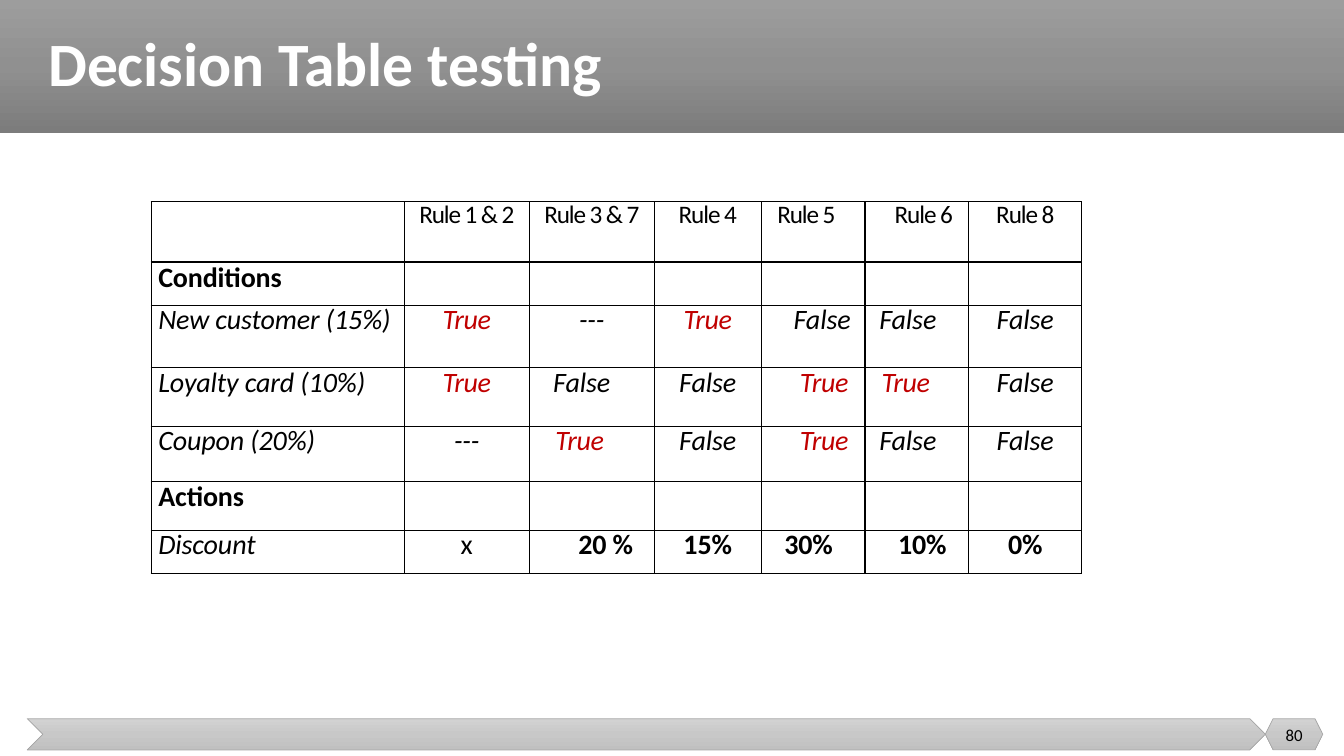
from copy import deepcopy
from dataclasses import dataclass

from lxml import etree
from pptx import Presentation
from pptx.dml.color import RGBColor
from pptx.enum.shapes import MSO_SHAPE
from pptx.enum.text import MSO_ANCHOR, PP_ALIGN
from pptx.oxml.ns import qn
from pptx.util import Inches, Pt

LEFT, CENTER, RIGHT = PP_ALIGN.LEFT, PP_ALIGN.CENTER, PP_ALIGN.RIGHT
MIDDLE = MSO_ANCHOR.MIDDLE
RECTANGLE, CHEVRON, HEXAGON = MSO_SHAPE.RECTANGLE, MSO_SHAPE.CHEVRON, MSO_SHAPE.HEXAGON


@dataclass(frozen=True)
class Theme:
    font: str = "Calibri"
    white: str = "FFFFFF"
    ink: str = "000000"
    true_red: str = "C00000"
    footer_line: str = "A5A5A5"
    banner: tuple = ("9D9D9D", "909090", "7C7C7C")
    footer: tuple = ("D2D2D2", "C8C8C8", "C0C0C0")
    title_size: int = 44
    rule_size: int = 18
    body_size: int = 20
    page_size: int = 12


THEME = Theme()
SLIDE_WIDTH, SLIDE_HEIGHT = 13.33, 7.5
BANNER_HEIGHT = 1.32
FOOTER_TOP, FOOTER_HEIGHT = 7.13, 0.31
PAGE_LEFT, PAGE_WIDTH = 12.55, 0.57
COLUMN_WIDTHS = (2.51, 1.24, 1.24, 1.06, 1.03, 1.03, 1.12)
ROW_HEIGHTS = (0.6, 0.43, 0.62, 0.58, 0.55, 0.48, 0.43)
RULE_ROW, DISCOUNT_ROW = 0, 6
SECTION_ROWS = (1, 5)
DECISIONS = (
    ("", "Rule 1 & 2", "Rule 3 & 7", "Rule 4", "Rule 5", "Rule 6", "Rule 8"),
    ("Conditions",),
    ("New customer (15%)", "True", "---", "True", "False", "False", "False"),
    ("Loyalty card (10%)", "True", "False", "False", "True", "True", "False"),
    ("Coupon (20%)", "---", "True", "False", "True", "False", "False"),
    ("Actions",),
    ("Discount", "x", "20 %", "15%", "30%", "10%", "0%"),
)
PLACEMENTS = {
    (0, 4): (LEFT, 0.16, 0),
    (0, 5): (RIGHT, 0, 0.16),
    (2, 4): (CENTER, 0.18, 0),
    (2, 5): (CENTER, 0, 0.18),
    (3, 2): (CENTER, 0, 0.2),
    (3, 4): (CENTER, 0.22, 0),
    (3, 5): (CENTER, 0, 0.22),
    (4, 2): (CENTER, 0, 0.24),
    (4, 4): (CENTER, 0.22, 0),
    (4, 5): (CENTER, 0, 0.18),
    (6, 2): (RIGHT, 0, 0.21),
    (6, 4): (LEFT, 0.23, 0),
    (6, 5): (RIGHT, 0, 0.22),
}


def style_runs(paragraph, size, color, bold=False, italic=False, spacing=0):
    for run in paragraph.runs:
        run.font.name = THEME.font
        run.font.size = Pt(size)
        run.font.bold = bold
        run.font.italic = italic
        run.font.color.rgb = RGBColor.from_string(color)
        if spacing:
            run.font._element.set("spc", str(round(spacing * 100)))


def add_band(slide, preset, box, colors, line=None):
    band = slide.shapes.add_shape(preset, *map(Inches, box))
    band.shadow.inherit = False
    band.fill.gradient()
    stop_list = band._element.spPr.find(qn("a:gradFill")).find(qn("a:gsLst"))
    stop_list.append(deepcopy(stop_list[-1]))
    band.fill.gradient_angle = 270
    for index, (stop, color) in enumerate(zip(band.fill.gradient_stops, colors)):
        stop.color.rgb = RGBColor.from_string(color)
        stop.position = index / (len(colors) - 1)
    if line:
        band.line.color.rgb = RGBColor.from_string(line)
        band.line.width = Pt(0.5)
    else:
        band.line.fill.background()


def add_label(slide, text, box, size, color, align=LEFT, bold=False):
    frame = slide.shapes.add_textbox(*map(Inches, box)).text_frame
    frame.word_wrap = True
    frame.vertical_anchor = MIDDLE
    frame.text = text
    paragraph = frame.paragraphs[0]
    paragraph.alignment = align
    paragraph.line_spacing = 0.9
    style_runs(paragraph, size, color, bold)


def outline_cell(cell):
    properties = cell._tc.get_or_add_tcPr()
    for side in ("a:lnL", "a:lnR", "a:lnT", "a:lnB"):
        edge = etree.SubElement(properties, qn(side), w=str(Pt(1)))
        fill = etree.SubElement(edge, qn("a:solidFill"))
        etree.SubElement(fill, qn("a:srgbClr"), val=THEME.ink)
    cell.fill.background()


def write_cell(cell, text, row, column):
    cell.margin_left = cell.margin_right = cell.margin_top = cell.margin_bottom = 0
    cell.text = text
    paragraph = cell.text_frame.paragraphs[0]
    default = (CENTER, 0, 0) if column else (LEFT, 0.07, 0)
    align, left, right = PLACEMENTS.get((row, column), default)
    paragraph.alignment = align
    indents = paragraph._p.get_or_add_pPr()
    for name, inset in (("marL", left), ("marR", right), ("indent", 0)):
        indents.set(name, str(Inches(inset)))

    section = row in SECTION_ROWS
    rule = row == RULE_ROW
    result = row == DISCOUNT_ROW and column > 0
    paragraph.line_spacing = Pt(20.4 if rule else 23.4 if section else 22.8)
    style_runs(
        paragraph,
        THEME.rule_size if rule else THEME.body_size,
        THEME.true_red if text == "True" else THEME.ink,
        bold=section or (result and text != "x"),
        italic=not (rule or section or result),
        spacing=-0.8 if rule else -0.3 if text == "True" else -0.1,
    )


def add_decision_table(slide, left, top):
    size = Inches(sum(COLUMN_WIDTHS)), Inches(sum(ROW_HEIGHTS))
    table = slide.shapes.add_table(
        len(ROW_HEIGHTS), len(COLUMN_WIDTHS), Inches(left), Inches(top), *size
    ).table
    table.first_row = table.horz_banding = False
    for column, width in zip(table.columns, COLUMN_WIDTHS):
        column.width = Inches(width)
    for row, height in zip(table.rows, ROW_HEIGHTS):
        row.height = Inches(height)
    for cell in table.iter_cells():
        outline_cell(cell)
    for row, entries in enumerate(DECISIONS):
        for column, text in enumerate(entries):
            if text:
                write_cell(table.cell(row, column), text, row, column)


def main():
    deck = Presentation()
    deck.slide_width, deck.slide_height = Inches(SLIDE_WIDTH), Inches(SLIDE_HEIGHT)
    slide = deck.slides.add_slide(deck.slide_layouts[6])

    add_band(slide, RECTANGLE, (0, 0, SLIDE_WIDTH, BANNER_HEIGHT), THEME.banner)
    ribbon_left = 0.27
    ribbon = (ribbon_left, FOOTER_TOP, PAGE_LEFT - ribbon_left, FOOTER_HEIGHT)
    page_badge = (PAGE_LEFT, FOOTER_TOP, PAGE_WIDTH, FOOTER_HEIGHT)
    for preset, box in ((CHEVRON, ribbon), (HEXAGON, page_badge)):
        add_band(slide, preset, box, THEME.footer, THEME.footer_line)

    add_label(slide, "Decision Table testing", (0.38, 0, 12.74, BANNER_HEIGHT),
              THEME.title_size, THEME.white, bold=True)
    add_label(slide, "80", (PAGE_LEFT, 7.1, PAGE_WIDTH, 0.4),
              THEME.page_size, THEME.ink, CENTER)
    add_decision_table(slide, 1.5, 2)
    deck.save("out.pptx")


if __name__ == "__main__":
    main()
